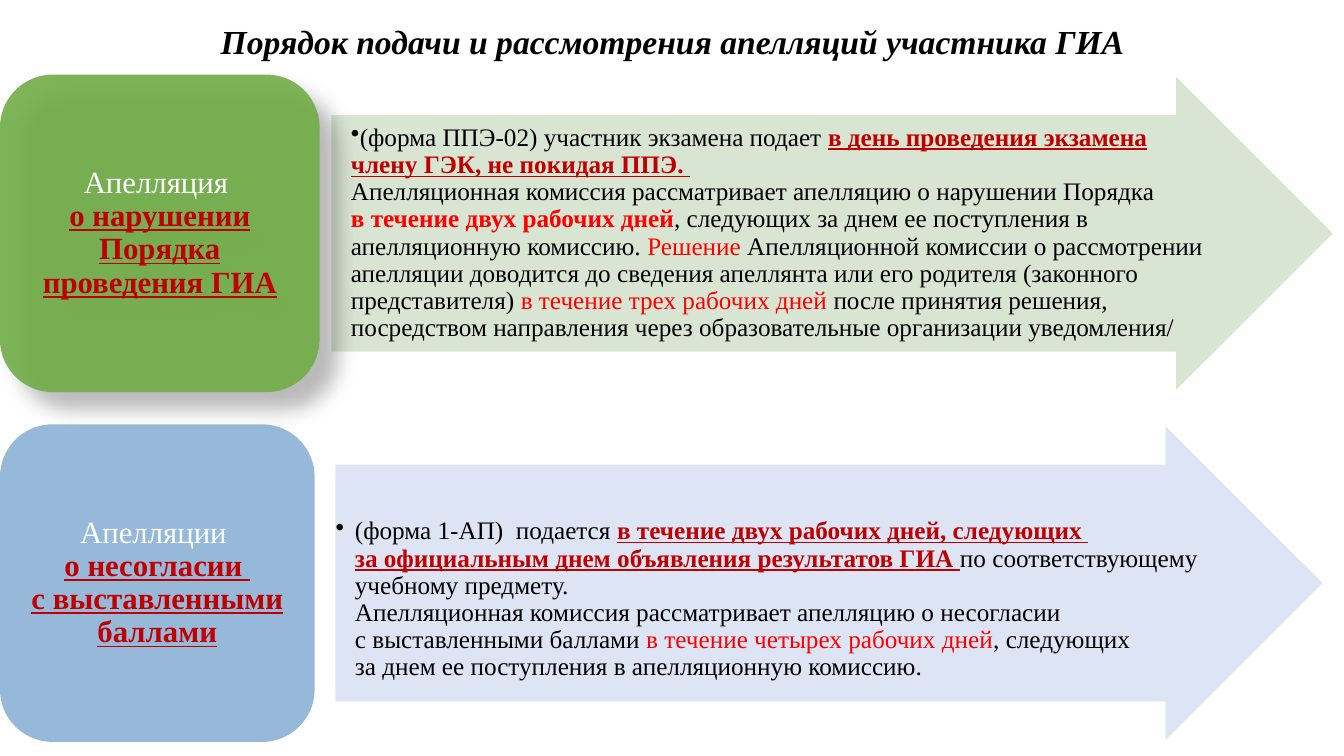
"""Builds the slide on filing and reviewing exam appeals."""
from dataclasses import dataclass

from lxml import etree
from pptx import Presentation
from pptx.dml.color import RGBColor
from pptx.enum.shapes import MSO_SHAPE
from pptx.enum.text import MSO_ANCHOR, PP_ALIGN
from pptx.oxml.ns import qn
from pptx.util import Emu, Pt

ARROW, CARD = MSO_SHAPE.RIGHT_ARROW, MSO_SHAPE.ROUNDED_RECTANGLE
MIDDLE = MSO_ANCHOR.MIDDLE
CENTER, LEFT = PP_ALIGN.CENTER, PP_ALIGN.LEFT
PX = 9144
ROW_TOP, ROW_STEP, ROW_HEIGHT = 74, 347, 315


@dataclass(frozen=True)
class Theme:
    """Colours and type sizes of the slide."""
    font: str = "Times New Roman"
    black: str = "000000"
    white: str = "FFFFFF"
    red: str = "FF0000"
    dark_red: str = "C00000"
    green: str = "70AD47"
    blue: str = "2E75B6"
    pale_green: str = "D5E3CF"
    pale_blue: str = "DAE3F3"
    title_size: int = 24
    card_size: int = 22
    body_size: int = 18


THEME = Theme()

STYLES = {
    "title": dict(color=THEME.black, bold=True, italic=True),
    "plain": dict(color=THEME.black),
    "light": dict(color=THEME.white),
    "red": dict(color=THEME.red),
    "strong": dict(color=THEME.red, bold=True),
    "key": dict(color=THEME.dark_red, bold=True, underline=True),
}

ROWS = [
    dict(
        card=dict(width=317, color=THEME.green, alpha=90, shadow=True, runs=[
            ("Апелляция \n", "light"),
            ("о нарушении Порядка проведения ГИА", "key"),
        ]),
        arrow=dict(left=328, width=995, color=THEME.pale_green,
                   indent=(19, 0), top_inset=1, runs=[
            ("(форма ППЭ-02) участник экзамена подает ", "plain"),
            ("в день проведения экзамена члену ГЭК, не покидая ППЭ. \n", "key"),
            ("Апелляционная комиссия рассматривает апелляцию "
             "о нарушении Порядка \n", "plain"),
            ("в течение двух рабочих дней", "strong"),
            (", следующих за днем ее поступления в апелляционную комиссию. ",
             "plain"),
            ("Решение", "red"),
            (" Апелляционной комиссии о рассмотрении апелляции доводится "
             "до сведения апеллянта или его родителя (законного "
             "представителя) ", "plain"),
            ("в течение трех рабочих дней ", "red"),
            ("после принятия решения, посредством направления через "
             "образовательные организации уведомления/", "plain"),
        ]),
    ),
    dict(
        card=dict(width=312, color=THEME.blue, alpha=50, shadow=False, runs=[
            ("Апелляции \n", "light"),
            ("о несогласии \nс выставленными баллами", "key"),
        ]),
        arrow=dict(left=332, width=981, color=THEME.pale_blue,
                   indent=(19, -19), top_inset=34, runs=[
            ("(форма 1-АП)  подается ", "plain"),
            ("в течение двух рабочих дней, следующих \n"
             "за официальным днем объявления результатов ГИА ", "key"),
            ("по соответствующему учебному предмету. \n"
             "Апелляционная комиссия рассматривает апелляцию о несогласии \n"
             "с выставленными баллами ", "plain"),
            ("в течение четырех рабочих дней", "red"),
            (", следующих \nза днем ее поступления в апелляционную комиссию.",
             "plain"),
        ]),
    ),
]


def px(*values):
    """Turns pixel lengths into EMU."""
    return [Emu(v * PX) for v in values]


def add_run(p, text, size, color, bold=False, italic=False, underline=False):
    """Adds one formatted run to a paragraph."""
    r = p.add_run()
    r.text = text
    font = r.font
    font.name, font.size = THEME.font, Pt(size)
    font.bold, font.italic, font.underline = bold, italic, underline
    font.color.rgb = RGBColor.from_string(color)


def fill_text(tf, runs, size, align, insets=(9, 5, 9, 5)):
    """Writes styled runs into a frame and returns the paragraph."""
    tf.word_wrap = True
    tf.vertical_anchor = MIDDLE
    (tf.margin_left, tf.margin_top,
     tf.margin_right, tf.margin_bottom) = px(*insets)
    p = tf.paragraphs[0]
    p.alignment = align
    p.line_spacing = 0.9
    for text, style in runs:
        for i, line in enumerate(text.split("\n")):
            if i:
                p.add_line_break()
            if line:
                add_run(p, line, size, **STYLES[style])
    return p


def add_bullet(p, margin, indent):
    """Gives a paragraph a round bullet and its indents."""
    pPr = p._p.get_or_add_pPr()
    pPr.set("marL", str(margin * PX))
    pPr.set("indent", str(indent * PX))
    etree.SubElement(pPr, qn("a:buChar"), char="•")


def set_alpha(color, percent):
    """Sets the opacity of a colour element."""
    etree.SubElement(color, qn("a:alpha"), val=str(percent * 1000))


def add_shadow(s):
    """Adds a soft shadow to the lower right."""
    effects = s._element.spPr.find(qn("a:effectLst"))
    shadow = etree.SubElement(
        effects, qn("a:outerShdw"), blurRad=str(Pt(15)), dist=str(Pt(18)),
        dir="2700000", rotWithShape="0")
    color = etree.SubElement(shadow, qn("a:srgbClr"), val=THEME.black)
    set_alpha(color, 30)


def add_block(slide, kind, box, color, alpha):
    """Adds a translucent preset shape without an outline."""
    s = slide.shapes.add_shape(kind, *px(*box))
    s.shadow.inherit = False
    s.fill.solid()
    s.fill.fore_color.rgb = RGBColor.from_string(color)
    set_alpha(s._element.spPr.find(qn("a:solidFill"))[0], alpha)
    s.line.fill.background()
    return s


def add_arrow(slide, top, left, width, color, indent, top_inset, runs):
    """Adds a wide arrow with a bulleted explanation."""
    s = add_block(slide, ARROW, (left, top, width, ROW_HEIGHT), color, 90)
    s.adjustments[0], s.adjustments[1] = 0.75, 0.5
    s.line.color.rgb = RGBColor.from_string(THEME.white)
    s.line.width = Pt(1)
    p = fill_text(s.text_frame, runs, THEME.body_size, LEFT,
                  (1, top_inset, 1, 1))
    add_bullet(p, *indent)


def add_card(slide, top, width, color, alpha, shadow, runs):
    """Adds a rounded card naming the kind of appeal."""
    s = add_block(slide, CARD, (0, top, width, ROW_HEIGHT), color, alpha)
    if shadow:
        add_shadow(s)
    fill_text(s.text_frame, runs, THEME.card_size, CENTER)


def add_title(slide, text):
    """Adds the slide title."""
    s = slide.shapes.add_textbox(*px(92, 12, 1150, 62))
    fill_text(s.text_frame, [(text, "title")], THEME.title_size, CENTER)


def main():
    """Builds and saves the slide."""
    prs = Presentation()
    prs.slide_width, prs.slide_height = px(1333, 750)
    slide = prs.slides.add_slide(prs.slide_layouts[6])
    add_title(slide, "Порядок подачи и рассмотрения апелляций участника ГИА")
    for i, row in enumerate(ROWS):
        top = ROW_TOP + i * ROW_STEP
        add_arrow(slide, top, **row["arrow"])
        add_card(slide, top, **row["card"])
    prs.save("out.pptx")


if __name__ == "__main__":
    main()
